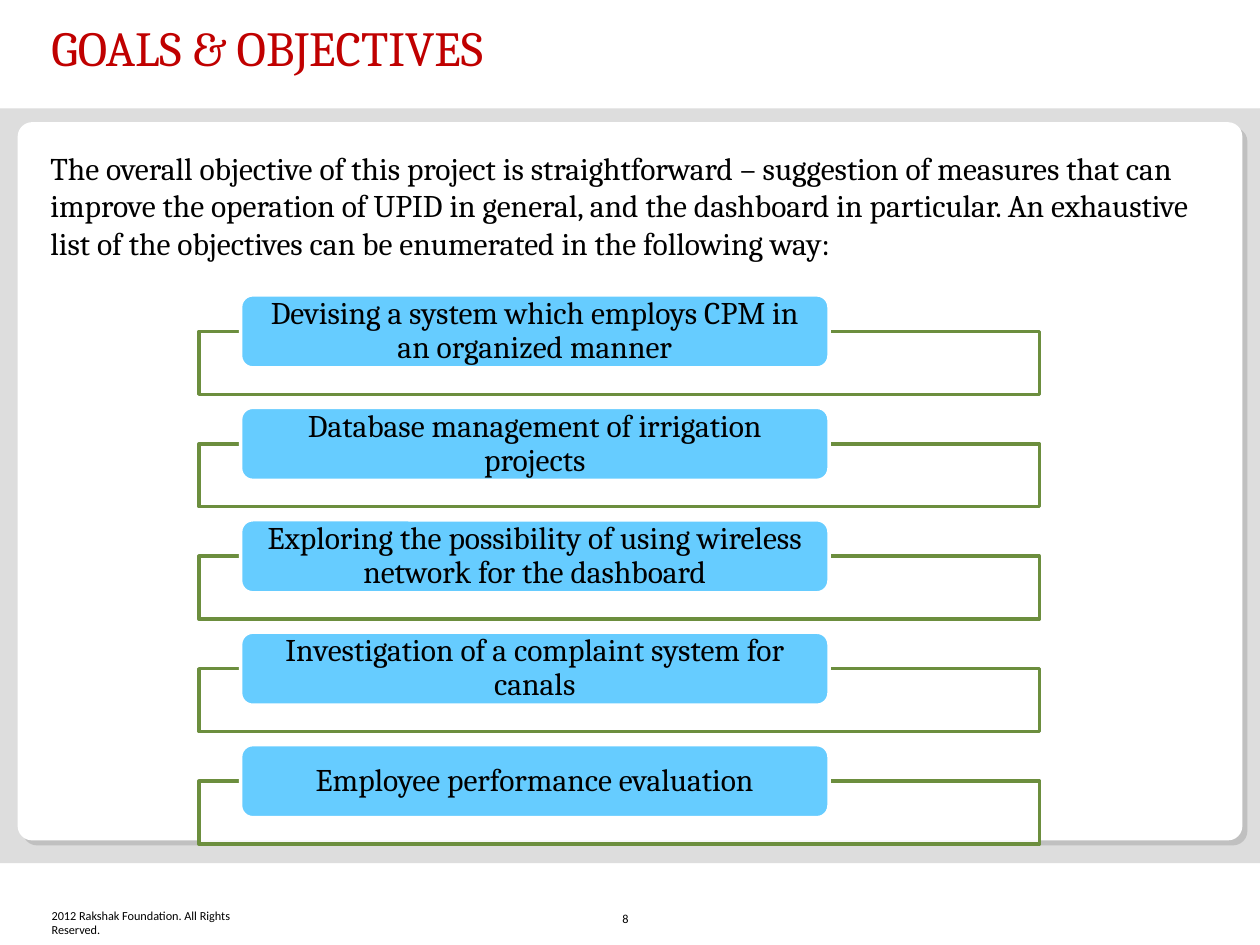
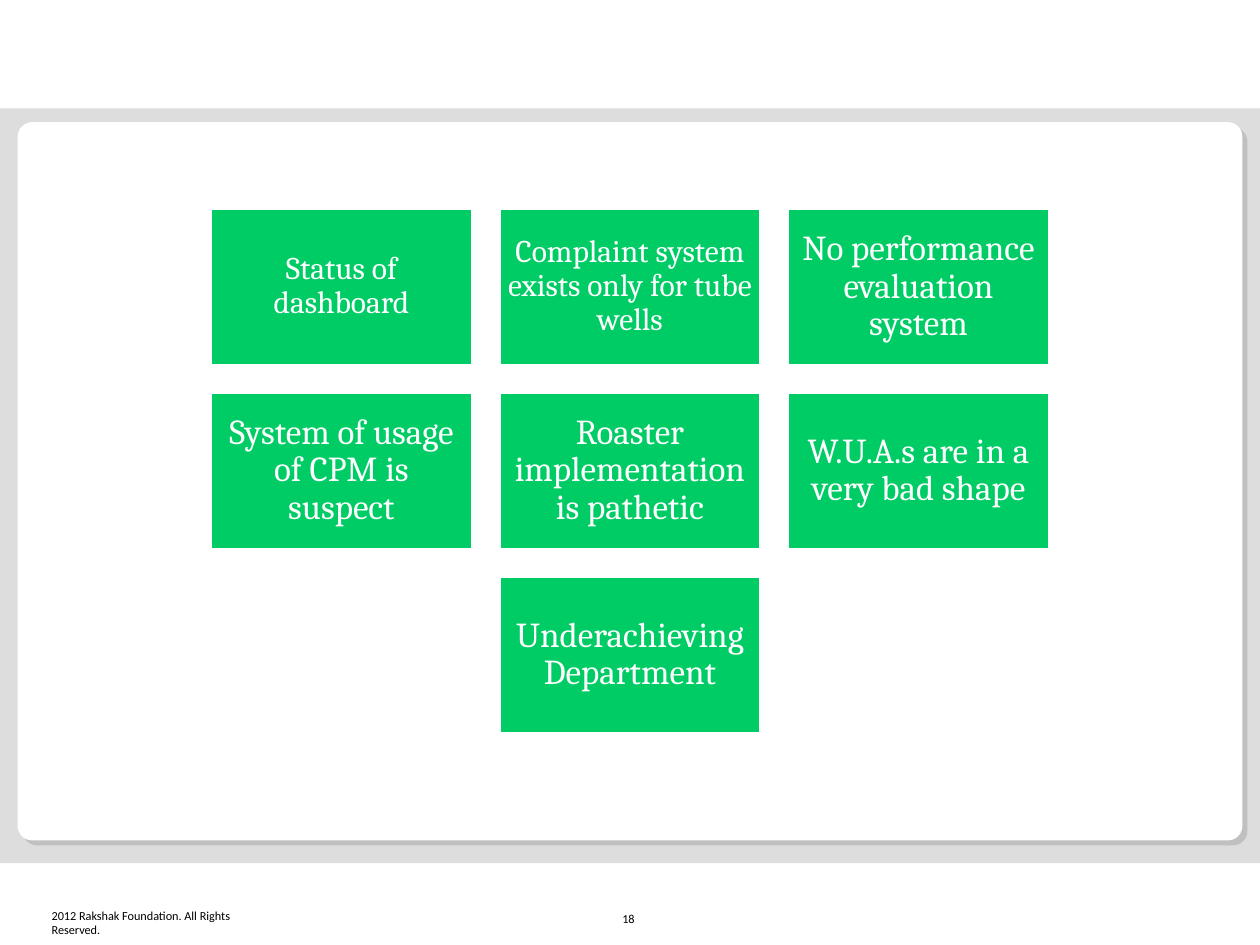
from lxml import etree
from pptx import Presentation
from pptx.dml.color import RGBColor
from pptx.enum.shapes import MSO_SHAPE
from pptx.enum.text import MSO_ANCHOR, PP_ALIGN
from pptx.oxml.ns import qn
from pptx.util import Inches, Pt

RECTANGLE, ROUNDED = MSO_SHAPE.RECTANGLE, MSO_SHAPE.ROUNDED_RECTANGLE
TOP, MIDDLE, BOTTOM = MSO_ANCHOR.TOP, MSO_ANCHOR.MIDDLE, MSO_ANCHOR.BOTTOM
LEFT, CENTER = PP_ALIGN.LEFT, PP_ALIGN.CENTER

WIDTH, HEIGHT = 10, 7.5
WHITE, BLACK, RED = "FFFFFF", "000000", "C00000"
BAND_GREY, SHADOW_GREY = "DDDDDD", "C0C0C0"
SKY_BLUE, OLIVE, GREEN = "66CCFF", "6C8E3E", "00CC66"
SERIF, SANS = "Cambria", "Calibri"


def color(hex_code):
    return RGBColor.from_string(hex_code)


def add_box(slide, place, text="", size=18, ink=BLACK, font=SERIF, kind=None, fill=None,
            line=None, align=LEFT, anchor=TOP, insets=(0, 0), spacing=None):
    """Add a filled shape, or a plain text box when no kind is given."""
    box = [Inches(length) for length in place]
    if kind is None:
        shape = slide.shapes.add_textbox(*box)
    else:
        shape = slide.shapes.add_shape(kind, *box)
        shape.shadow.inherit = False
        shape.fill.solid()
        shape.fill.fore_color.rgb = color(fill)
        if line:
            shape.line.color.rgb = color(line)
            shape.line.width = Pt(2)
        else:
            shape.line.fill.background()
    if text:
        frame = shape.text_frame
        frame.word_wrap = True
        frame.vertical_anchor = anchor
        frame.margin_left = frame.margin_right = Inches(insets[0])
        frame.margin_top = frame.margin_bottom = Inches(insets[1])
        paragraph = frame.paragraphs[0]
        paragraph.text = text
        paragraph.alignment = align
        if spacing:
            paragraph.line_spacing = spacing
        paragraph.font.name = font
        paragraph.font.size = Pt(size)
        paragraph.font.color.rgb = color(ink)
    return shape


presentation = Presentation()
presentation.slide_width, presentation.slide_height = Inches(WIDTH), Inches(HEIGHT)
blank_layout = presentation.slide_layouts[6]

# Shared band, panel with its offset shadow, footer and page number
slides = []
for page_number in ("8", "18"):
    slide = presentation.slides.add_slide(blank_layout)
    add_box(slide, (0, 0.86, WIDTH, 5.99), kind=RECTANGLE, fill=BAND_GREY)
    for offset, panel_fill in ((0.04, SHADOW_GREY), (0, WHITE)):
        panel = add_box(slide, (0.14 + offset, 0.97 + offset, 9.72, 5.7),
                        kind=ROUNDED, fill=panel_fill)
        panel.adjustments[0] = 0.02
    add_box(slide, (0.41, 7.2, 1.65, 0.24), "2012 Rakshak Foundation. All Rights Reserved.",
            size=7, font=SANS, anchor=BOTTOM)
    add_box(slide, (4.84, 7.06, 0.32, 0.34), page_number,
            size=7, font=SANS, anchor=BOTTOM, insets=(0.1, 0.05))
    slides.append(slide)
goals_slide, findings_slide = slides

# Goals: title and introduction
add_box(goals_slide, (0.31, 0.19, 7.94, 0.44), "GOALS & OBJECTIVES", size=28, ink=RED,
        anchor=MIDDLE, insets=(0.1, 0.05), spacing=0.85)
add_box(goals_slide, (0.31, 1.14, 9.36, 0.98),
        "The overall objective of this project is straightforward – suggestion of measures "
        "that can improve the operation of UPID in general, and the dashboard in particular. "
        "An exhaustive list of the objectives can be enumerated in the following way:",
        insets=(0.09, 0.04))

# Goals: one label over an outlined frame per objective
objectives = (
    "Devising a system which employs CPM in an organized manner",
    "Database management of irrigation projects",
    "Exploring the possibility of using wireless network for the dashboard",
    "Investigation of a complaint system for canals",
    "Employee performance evaluation",
)
first_label_top, last_label_top = 2.34, 5.91
row_pitch = (last_label_top - first_label_top) / (len(objectives) - 1)
for row, objective in enumerate(objectives):
    label_top = first_label_top + row * row_pitch
    frame_shape = add_box(goals_slide, (1.58, label_top + 0.29, 6.67, 0.5),
                          kind=RECTANGLE, fill=WHITE, line=OLIVE)
    fill_color = frame_shape.fill._xPr.find(qn("a:solidFill"))[0]
    etree.SubElement(fill_color, qn("a:alpha"), val="90000")
    add_box(goals_slide, (1.91, label_top, 4.67, 0.58), objective, kind=ROUNDED,
            fill=SKY_BLUE, line=WHITE, align=CENTER, anchor=MIDDLE,
            insets=(0.18, 0), spacing=0.9)

# Findings: rows of tiles, each row centred on the slide
finding_rows = (
    (("Status of dashboard", 18), ("Complaint system exists only for tube wells", 18),
     ("No performance evaluation system", 20)),
    (("System of usage of CPM is suspect", 20), ("Roaster implementation is pathetic", 20),
     ("W.U.A.s are in a very bad shape", 20)),
    (("Underachieving Department", 20),),
)
tile_width, tile_height, gap = 2.08, 1.25, 0.21
for row, findings in enumerate(finding_rows):
    row_width = len(findings) * (tile_width + gap) - gap
    row_left = (WIDTH - row_width) / 2
    for column, (finding, size) in enumerate(findings):
        place = (row_left + column * (tile_width + gap), 1.65 + row * (tile_height + gap),
                 tile_width, tile_height)
        add_box(findings_slide, place, finding, size=size, ink=WHITE, kind=RECTANGLE,
                fill=GREEN, line=WHITE, align=CENTER, anchor=MIDDLE,
                insets=(size / 250, size / 250), spacing=0.9)

presentation.save("out.pptx")
